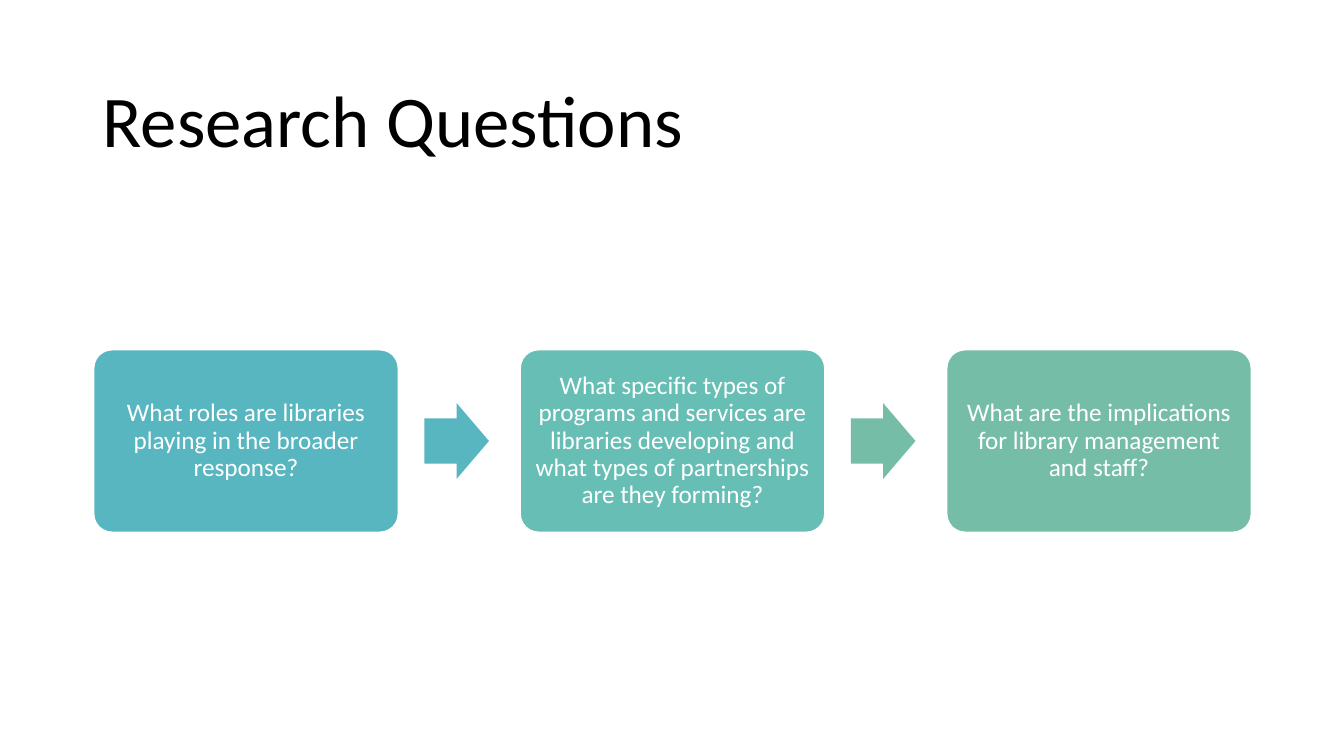
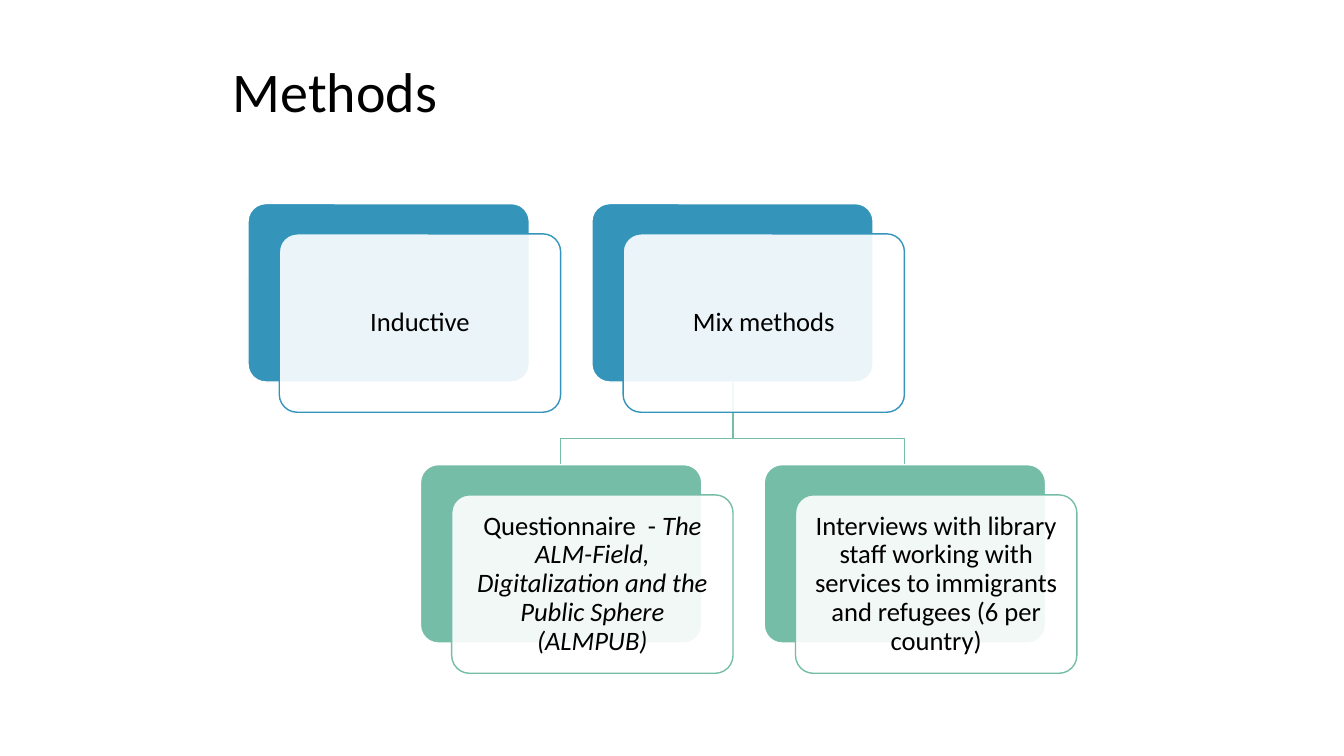
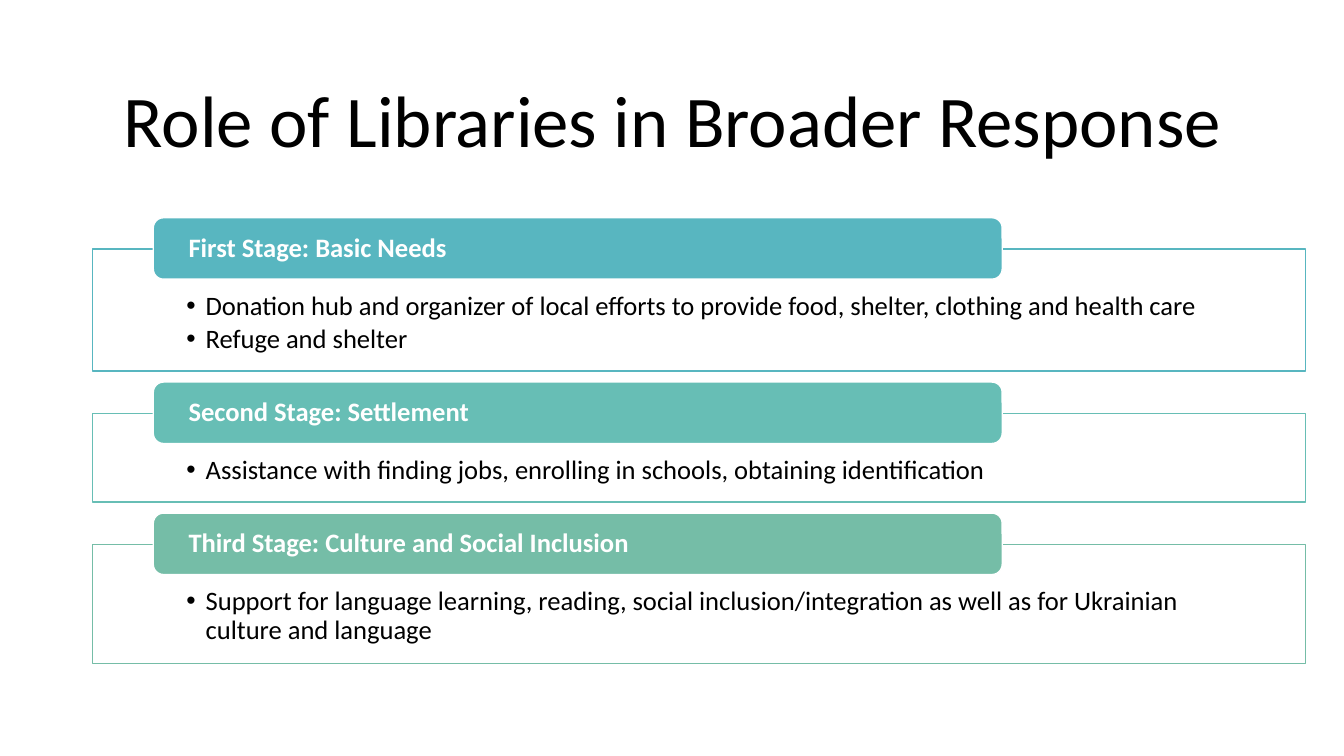
from lxml.etree import SubElement
from pptx import Presentation
from pptx.dml.color import RGBColor
from pptx.enum.shapes import MSO_SHAPE as Preset
from pptx.enum.text import MSO_ANCHOR as Anchor, PP_ALIGN as Align
from pptx.oxml.ns import qn
from pptx.util import Inches, Pt

FONT = "Calibri"
COLORS = {
    "white": "FFFFFF",
    "black": "000000",
    "blue": "3494BA",
    "aqua": "58B6C0",
    "teal": "67BEB5",
    "green": "75BDA7",
}


def color(name):
    return RGBColor.from_string(COLORS[name])


def set_margins(frame, horizontal, top, bottom):
    frame.margin_left = frame.margin_right = Inches(horizontal)
    frame.margin_top, frame.margin_bottom = Inches(top), Inches(bottom)


def add_bullet(paragraph):
    properties = paragraph._p.get_or_add_pPr()
    properties.set("marL", str(Inches(0.19)))
    properties.set("indent", str(-Inches(0.19)))
    SubElement(properties, qn("a:buFont"), typeface="Arial")
    SubElement(properties, qn("a:buChar"), char="•")


def write(frame, paragraphs, size, text_color, align=Align.LEFT,
          anchor=Anchor.MIDDLE, bold=False, bullets=False):
    """Fill a frame; each paragraph is a string or a list of (text, italic) runs."""
    frame.word_wrap = True
    frame.vertical_anchor = anchor
    for index, content in enumerate(paragraphs):
        paragraph = frame.add_paragraph() if index else frame.paragraphs[0]
        paragraph.alignment = align
        paragraph.line_spacing = 0.9
        paragraph.space_after = Pt(3 if bullets else 0)
        if bullets:
            add_bullet(paragraph)
        font = paragraph.font
        font.name, font.size, font.bold = FONT, Pt(size), bold
        font.color.rgb = color(text_color)
        runs = [(content, False)] if isinstance(content, str) else content
        for text, italic in runs:
            run = paragraph.add_run()
            run.text = text
            if italic:
                run.font.italic = True


def add_title(slide, text, left=0.92, top=0.61, width=11.5, height=1.24, size=52, **style):
    box = slide.shapes.add_textbox(Inches(left), Inches(top), Inches(width), Inches(height))
    write(box.text_frame, [text], size, "black", **style)


def add_block(slide, preset, left, top, width, height, fill, line=None,
              adjustments=(), opacity=None):
    shape = slide.shapes.add_shape(
        preset, Inches(left), Inches(top), Inches(width), Inches(height))
    shape.shadow.inherit = False
    for index, value in enumerate(adjustments):
        shape.adjustments[index] = value
    shape.fill.solid()
    shape.fill.fore_color.rgb = color(fill)
    if opacity is not None:
        fill_color = shape._element.spPr.find(qn("a:solidFill"))[0]
        SubElement(fill_color, qn("a:alpha"), val=str(opacity * 1000))
    if line:
        shape.line.color.rgb = color(line)
        shape.line.width = Pt(1)
    else:
        shape.line.fill.background()
    return shape


def add_question(slide, left, text, fill):
    box = add_block(slide, Preset.ROUNDED_RECTANGLE, left, 3.47, 3.02, 1.81,
                    fill, "white", [0.1])
    set_margins(box.text_frame, 0.07, 0.07, 0.07)
    write(box.text_frame, [text], 18, "white", Align.CENTER)


def add_card(slide, left, top, content, accent):
    """Draw a coloured card with a translucent text card offset in front of it."""
    width, height = 2.79, 1.77
    add_block(slide, Preset.ROUNDED_RECTANGLE, left, top, width, height,
              accent, "white", [0.1])
    front = add_block(slide, Preset.ROUNDED_RECTANGLE, left + 0.31, top + 0.3, width, height,
                      "white", accent, [0.1], opacity=90)
    set_margins(front.text_frame, 0.08, 0.08, 0.08)
    write(front.text_frame, [content], 19, "black", Align.CENTER)


def add_branch(slide, start_x, start_y, bend_y, end_x, end_y):
    builder = slide.shapes.build_freeform(Inches(start_x), Inches(start_y))
    corners = [(start_x, bend_y), (end_x, bend_y), (end_x, end_y)]
    builder.add_line_segments([(Inches(x), Inches(y)) for x, y in corners], close=False)
    branch = builder.convert_to_shape()
    branch.shadow.inherit = False
    branch.fill.background()
    branch.line.color.rgb = color("green")
    branch.line.width = Pt(1)


def add_stage(slide, top, height, heading, bullets, accent):
    body = add_block(slide, Preset.RECTANGLE, 0.92, top, 12.03, height,
                     "white", accent, opacity=90)
    set_margins(body.text_frame, 0.93, 0.43, 0.15)
    write(body.text_frame, bullets, 19, "black", anchor=Anchor.TOP, bullets=True)
    header = add_block(slide, Preset.ROUNDED_RECTANGLE, 1.52, top - 0.31, 8.42, 0.61,
                       accent, "white")
    set_margins(header.text_frame, 0.32, 0, 0)
    write(header.text_frame, [heading], 19, "white", bold=True)


def build_questions(slide):
    add_title(slide, "Research Questions")
    questions = [
        ("What roles are libraries playing in the broader response?", "aqua", "aqua"),
        ("What specific types of programs and services are libraries developing "
         "and what types of partnerships are they forming?", "teal", "green"),
        ("What are the implications for library management and staff?", "green", None),
    ]
    for index, (text, fill, arrow_fill) in enumerate(questions):
        left = 0.93 + 4.23 * index
        add_question(slide, left, text, fill)
        if arrow_fill:
            add_block(slide, Preset.RIGHT_ARROW, left + 3.28, 4, 0.64, 0.75,
                      arrow_fill, adjustments=[0.6, 0.5])


def build_methods(slide):
    add_title(slide, "Methods", 2.21, 0.59, 9.83, 1.22, 40, anchor=Anchor.TOP)
    for end_x in (8.97, 5.56):
        add_branch(slide, 7.27, 3.79, 4.35, end_x, 4.61)
    rows = [
        (2.46, 2.02, "blue", ["Inductive", "Mix methods"]),
        (4.17, 4.61, "green", [
            [("Questionnaire  - ", False),
             ("The ALM-Field, Digitalization and the Public Sphere (ALMPUB)", True)],
            "Interviews with library staff working with services to immigrants "
            "and refugees (6 per country)",
        ]),
    ]
    for left, top, accent, cards in rows:
        for index, content in enumerate(cards):
            add_card(slide, left + 3.41 * index, top, content, accent)


def build_stages(slide):
    add_title(slide, "Role of Libraries in Broader Response", align=Align.CENTER)
    stages = [
        (1.21, "First Stage: Basic Needs", [
            "Donation hub and organizer of local efforts to provide food, shelter, "
            "clothing and health care",
            "Refuge and shelter"], "aqua"),
        (0.88, "Second Stage: Settlement", [
            "Assistance with finding jobs, enrolling in schools, obtaining identification"],
         "teal"),
        (1.18, "Third Stage: Culture and Social Inclusion", [
            "Support for language learning, reading, social inclusion/integration "
            "as well as for Ukrainian culture and language"], "green"),
    ]
    top = 2.47
    for height, heading, bullets, accent in stages:
        add_stage(slide, top, height, heading, bullets, accent)
        top += height + 0.42


def main():
    presentation = Presentation()
    presentation.slide_width, presentation.slide_height = Inches(13.33), Inches(7.5)
    blank = presentation.slide_layouts[6]
    for build in (build_questions, build_methods, build_stages):
        build(presentation.slides.add_slide(blank))
    presentation.save("out.pptx")


if __name__ == "__main__":
    main()
